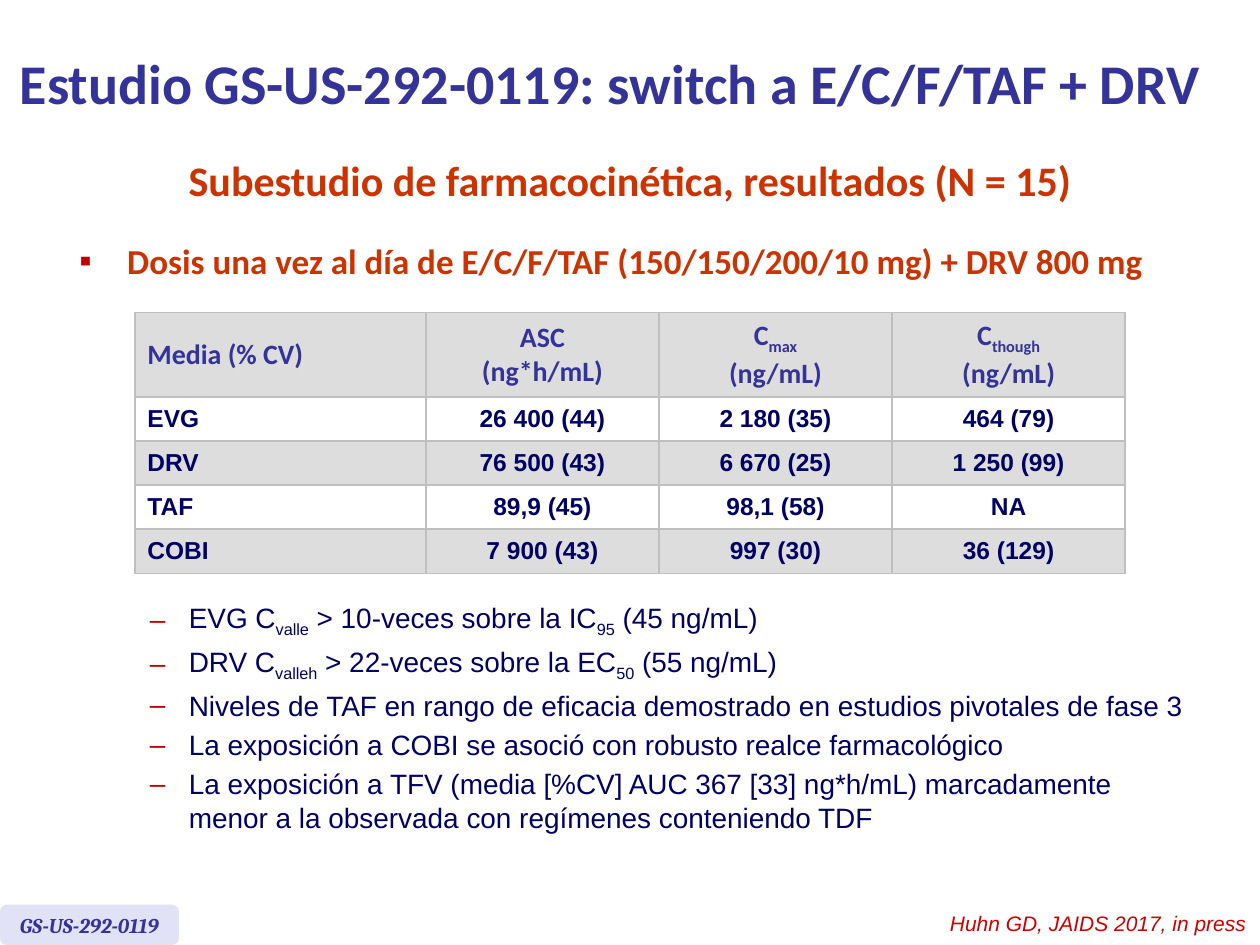
import pptx
import pptx.util
import pptx.dml.color
import pptx.enum.shapes
import pptx.enum.text
import lxml.etree

Inches, Pt = pptx.util.Inches, pptx.util.Pt
RGB = pptx.dml.color.RGBColor
Align = pptx.enum.text.PP_ALIGN
Anchor = pptx.enum.text.MSO_ANCHOR
Fit = pptx.enum.text.MSO_AUTO_SIZE
Shape = pptx.enum.shapes.MSO_SHAPE

RUST = RGB(0xCC, 0x33, 0x00)
RED = RGB(0xCC, 0x00, 0x00)
INDIGO = RGB(0x33, 0x33, 0x99)
NAVY = RGB(0x00, 0x00, 0x66)
LILAC = RGB(0xE2, 0xE2, 0xF6)
GREY = RGB(0xDD, 0xDD, 0xDD)
WHITE = RGB(0xFF, 0xFF, 0xFF)
MARK = "C00000"
RULE = "BFBFBF"

STUDY = "Estudio GS-US-292-0119: switch a E/C/F/TAF + DRV"
TITLE = "Subestudio de farmacocinética, resultados (N = 15)"
DOSE = "Dosis una vez al día de E/C/F/TAF (150/150/200/10 mg) + DRV 800 mg"
NOTES = [
    "EVG C~valle~ > 10-veces sobre la IC~95~ (45 ng/mL)",
    "DRV C~valleh~ > 22-veces sobre la EC~50~ (55 ng/mL)",
    "Niveles de TAF en rango de eficacia demostrado en estudios pivotales de fase 3",
    "La exposición a COBI se asoció con robusto realce farmacológico",
    "La exposición a TFV (media [%CV] AUC 367 [33] ng*h/mL) marcadamente "
    "menor a la observada con regímenes conteniendo TDF",
]
SOURCE = "Huhn GD, JAIDS 2017, in press"
TAG = "GS-US-292-0119"
ROWS = [
    ["Media (% CV)", "ASC|(ng*h/mL)", "C~max~|(ng/mL)", "C~though~|(ng/mL)"],
    ["EVG", "26 400 (44)", "2 180 (35)", "464 (79)"],
    ["DRV", "76 500 (43)", "6 670 (25)", "1 250 (99)"],
    ["TAF", "89,9 (45)", "98,1 (58)", "NA"],
    ["COBI", "7 900 (43)", "997 (30)", "36 (129)"],
]
WIDTHS = [2.31, 1.85, 1.85, 1.85]
HEIGHTS = [0.67, 0.35, 0.35, 0.35, 0.35]

FONTS = {
    "study": dict(name="Calibri", size=Pt(32), bold=True, color=INDIGO),
    "title": dict(name="Calibri", size=Pt(24), bold=True, color=RUST),
    "dose": dict(name="Calibri", size=Pt(20), bold=True, color=RUST),
    "note": dict(name="Arial", size=Pt(16), bold=False, color=NAVY),
    "source": dict(name="Arial", size=Pt(12), italic=True, color=RED),
    "tag": dict(name="Cambria", size=Pt(12), bold=True, italic=True, color=INDIGO),
    "head": dict(name="Calibri", size=Pt(16), bold=True, color=INDIGO),
    "cell": dict(name="Arial", size=Pt(14), bold=True, color=NAVY),
}


def style(font, look):
    for key, val in look.items():
        if key == "color":
            font.color.rgb = val
        else:
            setattr(font, key, val)


def child(node, tag, **attrs):
    item = lxml.etree.SubElement(node, pptx.oxml.ns.qn(tag))
    for key, val in attrs.items():
        item.set(key, val)
    return item


def bullet(para, sign, left, hang):
    props = para._p.get_or_add_pPr()
    props.set("marL", str(Inches(left)))
    props.set("indent", str(-Inches(hang)))
    child(child(props, "a:buClr"), "a:srgbClr", val=MARK)
    child(props, "a:buFont", typeface="Arial")
    child(props, "a:buChar", char=sign)


def write(frame, lines, look, align=Align.LEFT, mark=None, gap=0, level=0):
    for num, line in enumerate(lines):
        para = frame.paragraphs[0] if num == 0 else frame.add_paragraph()
        para.alignment = align
        para.level = level
        para.space_before = Pt(gap if num else 0)
        if mark:
            bullet(para, *mark)
        for part, text in enumerate(line.split("~")):
            run = para.add_run()
            run.text = text
            style(run.font, FONTS[look])
            if part % 2:
                run.font._element.set("baseline", "-25000")


def place(shape, left, top, width, height):
    shape.left, shape.top = Inches(left), Inches(top)
    shape.width, shape.height = Inches(width), Inches(height)


def box(slide, spot, anchor=Anchor.TOP):
    frame = slide.shapes.add_textbox(*map(Inches, spot)).text_frame
    frame.word_wrap = True
    frame.vertical_anchor = anchor
    return frame


def edge(cell):
    props = cell._tc.get_or_add_tcPr()
    for side in ("a:lnL", "a:lnR", "a:lnT", "a:lnB"):
        line = child(props, side, w=str(Pt(1)))
        child(child(line, "a:solidFill"), "a:srgbClr", val=RULE)


def grid(slide):
    spot = map(Inches, (1.07, 2.48, sum(WIDTHS), sum(HEIGHTS)))
    table = slide.shapes.add_table(len(ROWS), len(WIDTHS), *spot).table
    for col, width in zip(table.columns, WIDTHS):
        col.width = Inches(width)
    for r, (row, height) in enumerate(zip(ROWS, HEIGHTS)):
        table.rows[r].height = Inches(height)
        for c, text in enumerate(row):
            cell = table.cell(r, c)
            cell.vertical_anchor = Anchor.MIDDLE
            edge(cell)
            cell.fill.solid()
            cell.fill.fore_color.rgb = WHITE if r % 2 else GREY
            write(cell.text_frame, text.split("|"), "cell" if r else "head",
                  Align.CENTER if c else Align.LEFT)


def badge(slide):
    shape = slide.shapes.add_shape(Shape.ROUNDED_RECTANGLE, 0, 0, 0, 0)
    place(shape, 0, 7.18, 1.42, 0.32)
    shape.shadow.inherit = False
    shape.fill.solid()
    shape.fill.fore_color.rgb = LILAC
    shape.line.fill.background()
    frame = shape.text_frame
    frame.word_wrap = False
    frame.vertical_anchor = Anchor.MIDDLE
    write(frame, [TAG], "tag", Align.CENTER)


def main():
    deck = pptx.Presentation()
    deck.slide_width, deck.slide_height = Inches(10), Inches(7.5)
    slide = deck.slides.add_slide(deck.slide_layouts[1])
    title, body = slide.placeholders
    place(title, 0.59, 1.24, 8.82, 0.38)
    place(body, 0.53, 1.85, 9.42, 0.46)
    for shape in (title, body):
        shape.text_frame.auto_size = Fit.NONE
    title.text_frame.vertical_anchor = Anchor.MIDDLE
    write(title.text_frame, [TITLE], "title", Align.CENTER)
    write(body.text_frame, [DOSE], "dose", mark=("▪", 0.38, 0.38))
    write(box(slide, (0.59, 4.72, 9.01, 1.93)), NOTES, "note",
          mark=("–", 0.81, 0.31), gap=3.2, level=1)
    write(box(slide, (5.48, 7.18, 4.51, 0.3)), [SOURCE], "source", Align.RIGHT)
    write(box(slide, (0.06, 0.05, 9.9, 1.21), Anchor.MIDDLE), [STUDY], "study")
    badge(slide)
    grid(slide)
    deck.save("out.pptx")


if __name__ == "__main__":
    main()
